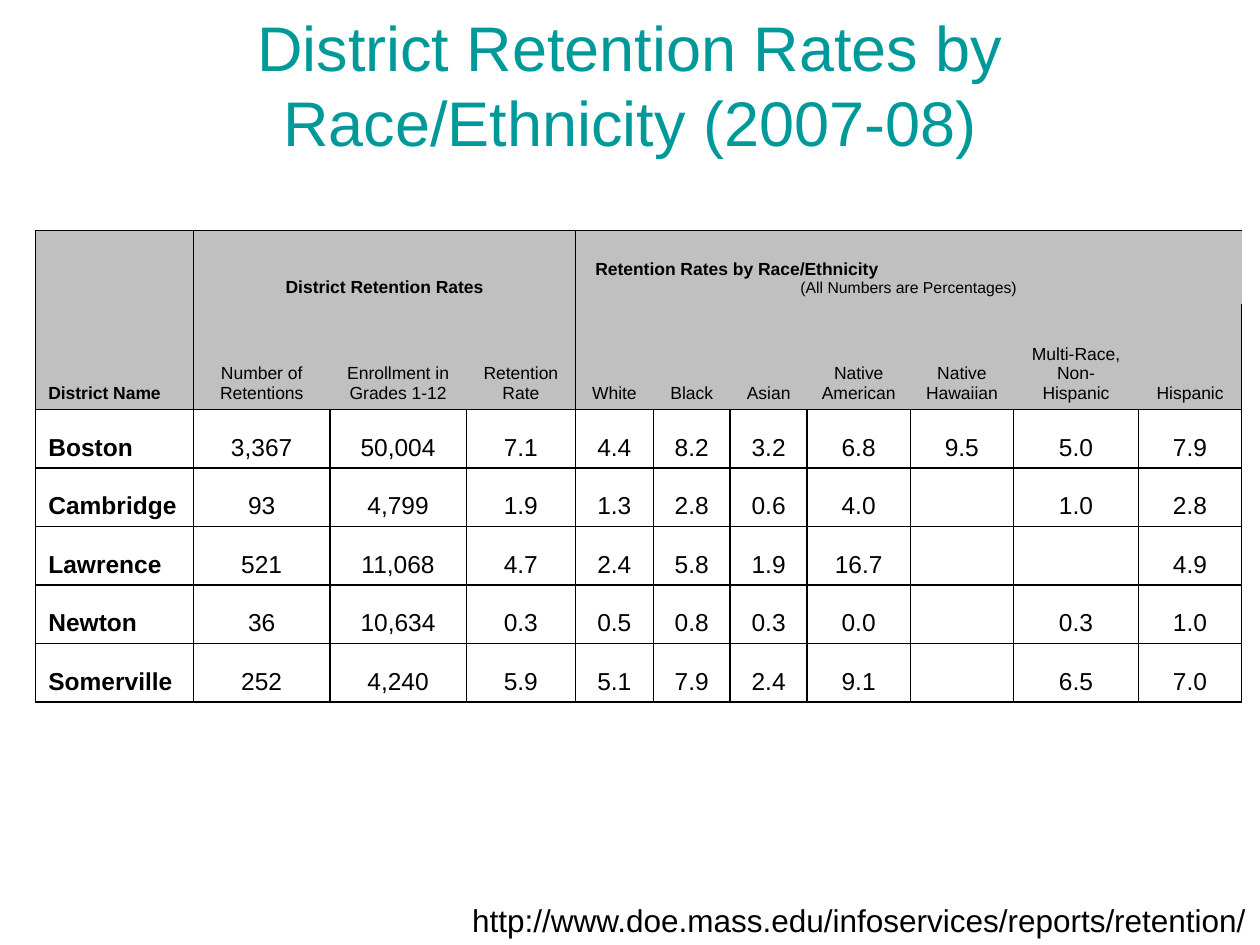
import pptx
import pptx.dml.color
import pptx.enum.text
import pptx.oxml.ns
import pptx.util
import lxml.etree
from dataclasses import dataclass

Cm = pptx.util.Cm
Pt = pptx.util.Pt
Align = pptx.enum.text.PP_ALIGN
Anchor = pptx.enum.text.MSO_ANCHOR
qn = pptx.oxml.ns.qn


@dataclass(frozen=True)
class Theme:
    font: str = "Arial"
    teal: str = "009999"
    ink: str = "000000"
    grey: str = "C0C0C0"
    title: float = 36
    link: float = 18
    data: float = 14
    head: float = 10
    note: float = 9


THEME = Theme()

# Table content
GROUPS = {0: "", 1: "District Retention Rates", 4: ""}
HEADS = ["District Name", "Number of Retentions", "Enrollment in Grades 1-12",
         "Retention Rate", "White", "Black", "Asian", "Native American",
         "Native Hawaiian", "Multi-Race, Non-Hispanic", "Hispanic"]
ROWS = [
    ["Boston", "3,367", "50,004", "7.1", "4.4", "8.2", "3.2", "6.8", "9.5", "5.0", "7.9"],
    ["Cambridge", "93", "4,799", "1.9", "1.3", "2.8", "0.6", "4.0", "", "1.0", "2.8"],
    ["Lawrence", "521", "11,068", "4.7", "2.4", "5.8", "1.9", "16.7", "", "", "4.9"],
    ["Newton", "36", "10,634", "0.3", "0.5", "0.8", "0.3", "0.0", "", "0.3", "1.0"],
    ["Somerville", "252", "4,240", "5.9", "5.1", "7.9", "2.4", "9.1", "", "6.5", "7.0"],
]
WIDTHS = [3.18, 2.75, 2.75, 2.2, 1.57, 1.55, 1.55, 2.08, 2.08, 2.52, 2.08]
HEIGHTS = [1.47, 2.13] + [1.18] * len(ROWS)


def write(para, text, size, color=THEME.ink, bold=False, align=Align.LEFT):
    """Put one formatted run into a paragraph."""
    para.alignment = align
    run = para.add_run()
    run.text = text
    run.font.name = THEME.font
    run.font.size = Pt(size)
    run.font.bold = bold
    run.font.color.rgb = pptx.dml.color.RGBColor.from_string(color)


class Page:
    def __init__(self, deck, theme):
        self.theme = theme
        self.slide = deck.slides.add_slide(deck.slide_layouts[5])

    def title(self, text, left, top, width, height):
        shape = self.slide.shapes.title
        shape.left, shape.top = Cm(left), Cm(top)
        shape.width, shape.height = Cm(width), Cm(height)
        frame = shape.text_frame
        frame.auto_size = pptx.enum.text.MSO_AUTO_SIZE.NONE
        frame.vertical_anchor = Anchor.TOP
        frame.margin_top = Cm(0.17)
        para = frame.paragraphs[0]
        para.line_spacing = Pt(43)
        write(para, text, self.theme.title, self.theme.teal, align=Align.CENTER)

    def link(self, text, left, top, width, height):
        box = self.slide.shapes.add_textbox(Cm(left), Cm(top), Cm(width), Cm(height))
        box.text_frame.word_wrap = False
        write(box.text_frame.paragraphs[0], text, self.theme.link)

    def edge(self, cell, sides):
        """Draw the named sides of a cell and clear the others."""
        props = cell._tc.get_or_add_tcPr()
        for side in "LRTB":
            line = lxml.etree.SubElement(props, qn(f"a:ln{side}"), w=str(Pt(1)))
            if side in sides:
                fill = lxml.etree.SubElement(line, qn("a:solidFill"))
                lxml.etree.SubElement(fill, qn("a:srgbClr"), val=self.theme.ink)
            else:
                lxml.etree.SubElement(line, qn("a:noFill"))

    def table(self, left, top):
        look = self.theme
        grid = self.slide.shapes.add_table(
            len(HEIGHTS), len(WIDTHS), Cm(left), Cm(top),
            Cm(sum(WIDTHS)), Cm(sum(HEIGHTS))).table
        grid.first_row = grid.horz_banding = False
        for col, width in zip(grid.columns, WIDTHS):
            col.width = Cm(width)
        for row, height in zip(grid.rows, HEIGHTS):
            row.height = Cm(height)

        # Borders and fills: the header shows only the edges of its groups
        stops = [*GROUPS, len(WIDTHS)]
        for r in range(len(HEIGHTS)):
            for c in range(len(WIDTHS)):
                cell = grid.cell(r, c)
                cell.vertical_anchor = Anchor.BOTTOM
                if r > 1:
                    self.edge(cell, "LRTB")
                    cell.fill.background()
                    continue
                sides = "TB"[r]
                sides += "L" if c in stops else ""
                sides += "R" if c + 1 in stops else ""
                self.edge(cell, sides)
                cell.fill.solid()
                cell.fill.fore_color.rgb = pptx.dml.color.RGBColor.from_string(look.grey)

        # Group headings
        for start, stop in zip(stops, stops[1:]):
            cell = grid.cell(0, start)
            if stop - start > 1:
                cell.merge(grid.cell(0, stop - 1))
            if GROUPS[start]:
                write(cell.text_frame.paragraphs[0], GROUPS[start], look.head,
                      bold=True, align=Align.CENTER)
        cell = grid.cell(0, 4)
        cell.margin_left = cell.margin_right = Cm(0.4)
        write(cell.text_frame.paragraphs[0], "Retention Rates by Race/Ethnicity",
              look.head, bold=True)
        write(cell.text_frame.add_paragraph(), "(All Numbers are Percentages)",
              look.note, align=Align.CENTER)

        # Column heads and district rows
        for r, row in enumerate([HEADS, *ROWS], 1):
            for c, text in enumerate(row):
                if text:
                    write(grid.cell(r, c).text_frame.paragraphs[0], text,
                          look.head if r == 1 else look.data, bold=c == 0,
                          align=Align.CENTER if c else Align.LEFT)


def main():
    deck = pptx.Presentation()
    deck.slide_width, deck.slide_height = Cm(25.4), Cm(19.05)
    page = Page(deck, THEME)
    page.table(0.72, 4.65)
    page.title("District Retention Rates by Race/Ethnicity (2007-08)",
               0.85, 0, 23.7, 3.3)
    page.link("http://www.doe.mass.edu/infoservices/reports/retention/",
              9.27, 18.03, 16.13, 1.02)
    deck.save("out.pptx")


if __name__ == "__main__":
    main()
